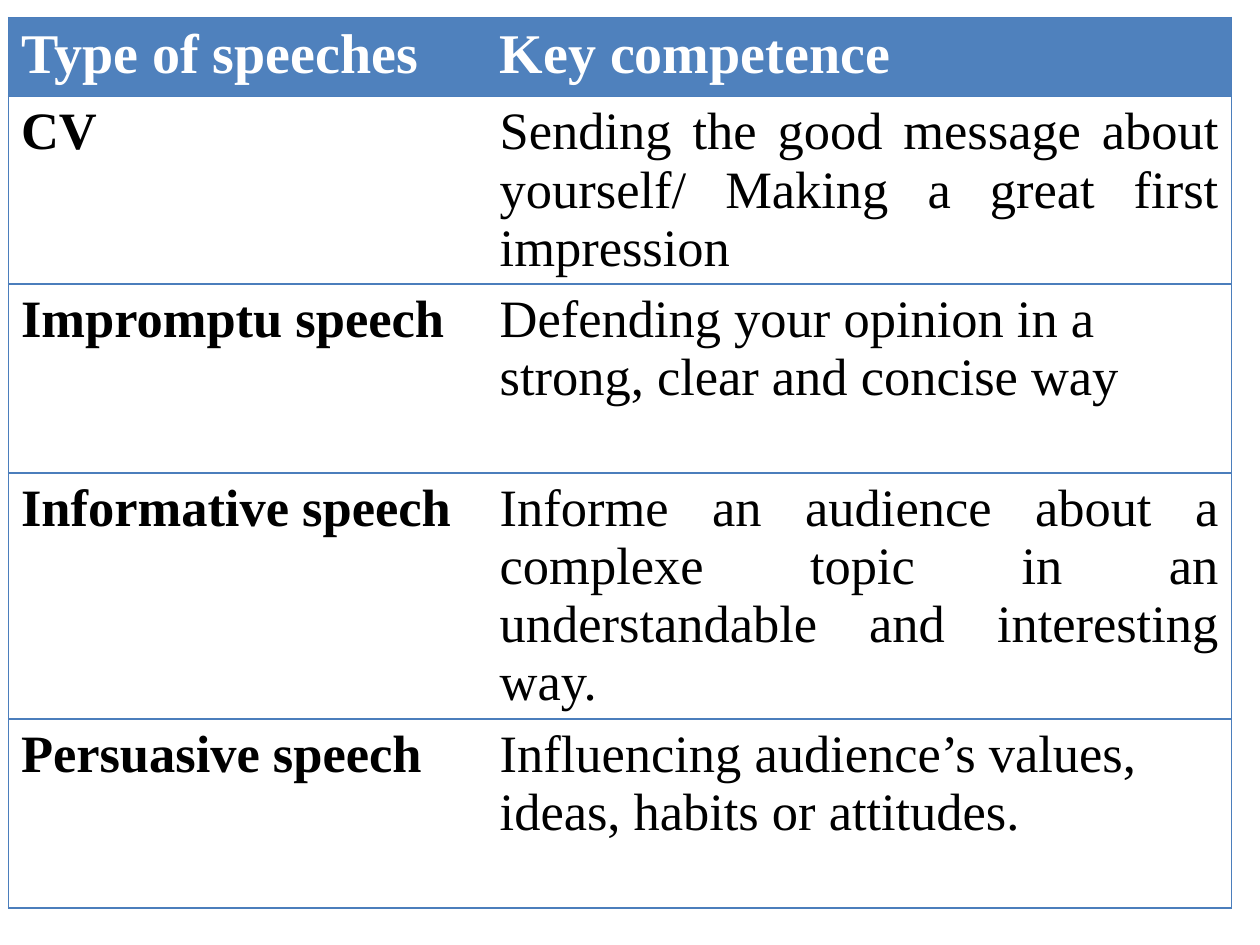
from dataclasses import dataclass

from lxml.etree import SubElement
from pptx import Presentation
from pptx.dml.color import RGBColor
from pptx.enum.text import PP_ALIGN
from pptx.oxml.ns import qn
from pptx.table import Table, _Cell
from pptx.util import Cm, Pt


@dataclass(frozen=True)
class Theme:
    font: str = "Times New Roman"
    header_size: Pt = Pt(32)
    body_size: Pt = Pt(30)
    header_fill: RGBColor = RGBColor(0x4F, 0x81, 0xBD)
    header_text: RGBColor = RGBColor(0xFF, 0xFF, 0xFF)
    body_text: RGBColor = RGBColor(0, 0, 0)
    border: RGBColor = RGBColor(0x4B, 0x7E, 0xBC)
    border_width: Pt = Pt(0.75)


@dataclass(frozen=True)
class Speech:
    kind: str
    competence: str
    height: Cm
    justified: bool = False


THEME = Theme()
COLUMN_WIDTHS = (Cm(9.65), Cm(15.01))
HEADER = Speech("Type of speeches", "Key competence", Cm(1.6))
SPEECHES = (
    Speech("CV", "Sending the good message about yourself/ Making a great first impression ",
           Cm(3.76), True),
    Speech("Impromptu speech", "Defending your opinion in a strong, clear and concise way", Cm(3.81)),
    Speech("Informative speech",
           "Informe an audience about a complexe topic in an understandable and interesting way. ",
           Cm(4.96), True),
    Speech("Persuasive speech", "Influencing audience’s values, ideas, habits or attitudes.", Cm(3.81)),
)


def draw_borders(cell: _Cell, visible: str) -> None:
    properties = cell._tc.get_or_add_tcPr()
    for side in "LRTB":
        edge = SubElement(properties, qn(f"a:ln{side}"), w=str(THEME.border_width))
        if side in visible:
            fill = SubElement(edge, qn("a:solidFill"))
            SubElement(fill, qn("a:srgbClr"), val=str(THEME.border))
        else:
            SubElement(edge, qn("a:noFill"))


def write_cell(cell: _Cell, text: str, is_header: bool, bold: bool, justified: bool) -> None:
    cell.text = text
    paragraph = cell.text_frame.paragraphs[0]
    paragraph.alignment = PP_ALIGN.JUSTIFY if justified else PP_ALIGN.LEFT
    run_font = paragraph.runs[0].font
    for font in (paragraph.font, run_font):
        font.name = THEME.font
        font.size = THEME.header_size if is_header else THEME.body_size
        font.bold = bold
        font.color.rgb = THEME.header_text if is_header else THEME.body_text
    if is_header:
        cell.fill.solid()
        cell.fill.fore_color.rgb = THEME.header_fill
    else:
        cell.fill.background()


def fill_row(table: Table, index: int, speech: Speech) -> None:
    is_header = index == 0
    table.rows[index].height = speech.height
    kind, competence = table.cell(index, 0), table.cell(index, 1)
    draw_borders(kind, "LTB")
    draw_borders(competence, "RTB")
    write_cell(kind, speech.kind, is_header, True, False)
    write_cell(competence, speech.competence, is_header, is_header, speech.justified)


def main() -> None:
    presentation = Presentation()
    presentation.slide_width, presentation.slide_height = Cm(25.4), Cm(19.05)
    slide = presentation.slides.add_slide(presentation.slide_layouts[6])
    rows = (HEADER, *SPEECHES)
    overview = slide.shapes.add_table(
        len(rows), len(COLUMN_WIDTHS), Cm(0.17), Cm(0.35),
        sum(COLUMN_WIDTHS), sum(row.height for row in rows),
    ).table
    overview.horz_banding = False
    for column, width in zip(overview.columns, COLUMN_WIDTHS):
        column.width = width
    for index, speech in enumerate(rows):
        fill_row(overview, index, speech)
    presentation.save("out.pptx")


if __name__ == "__main__":
    main()
